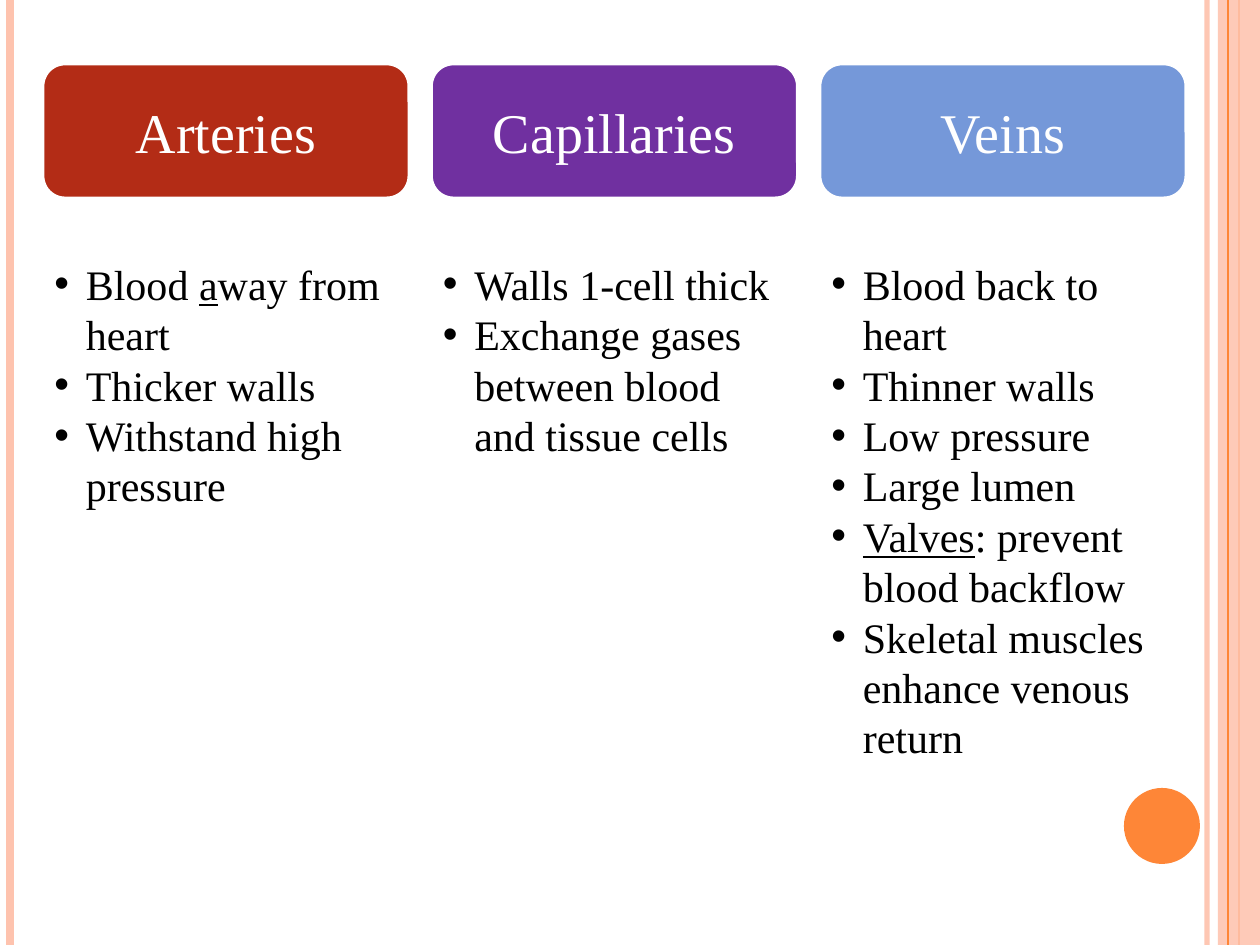
from lxml import etree
from pptx import Presentation
from pptx import util as u
from pptx.dml import color
from pptx.enum import shapes, text
from pptx.oxml import ns

FONT = "Times New Roman"
PEACH, ORANGE, WHITE, BLACK = "FEC3AE", "FE8637", "FFFFFF", "000000"
WIDTH, HEIGHT = 1260, 945

# Each bullet is a list of (words, underlined) runs
COLUMNS = [
    ("Arteries", "B32C16", [
        [("Blood ", False), ("a", True), ("way from heart", False)],
        [("Thicker walls", False)],
        [("Withstand high pressure", False)],
    ]),
    ("Capillaries", "7030A0", [
        [("Walls 1-cell thick", False)],
        [("Exchange gases between blood and tissue cells", False)],
    ]),
    ("Veins", "7598D9", [
        [("Blood back to heart", False)],
        [("Thinner walls", False)],
        [("Low pressure", False)],
        [("Large lumen", False)],
        [("Valves", True), (": prevent blood backflow", False)],
        [("Skeletal muscles enhance venous return", False)],
    ]),
]


def px(length):
    return u.Emu(round(length * 914400 / 126))


def paint(target, hex_color):
    """Set a solid colour on a fill."""
    target.solid()
    target.fore_color.rgb = color.RGBColor.from_string(hex_color)


def set_alpha(fill_parent, percent):
    rgb = next(fill_parent.iter(ns.qn("a:srgbClr")))
    etree.SubElement(rgb, ns.qn("a:alpha"), val=str(percent * 1000))


def add_box(slide, kind, left, top, width, height, fill):
    shape = slide.shapes.add_shape(kind, px(left), px(top), px(width), px(height))
    shape.shadow.inherit = False
    paint(shape.fill, fill)
    shape.line.fill.background()
    return shape


def add_stripe(slide, x, hex_color, points):
    stripe = slide.shapes.add_connector(
        shapes.MSO_CONNECTOR.STRAIGHT, px(x), px(0), px(x), px(HEIGHT))
    paint(stripe.line.fill, hex_color)
    stripe.line.width = u.Pt(points)
    etree.SubElement(stripe._element.spPr, ns.qn("a:effectLst"))
    return stripe


def add_run(paragraph, words, size, hex_color, underlined=False):
    run = paragraph.add_run()
    run.text = words
    run.font.name = FONT
    run.font.size = u.Pt(size)
    if underlined:
        run.font.underline = True
    paint(run.font.fill, hex_color)


def add_bullet(paragraph):
    properties = paragraph._p.get_or_add_pPr()
    properties.set("marL", str(u.Inches(0.25)))
    properties.set("indent", str(-u.Inches(0.25)))
    bullet_color = etree.SubElement(properties, ns.qn("a:buClr"))
    etree.SubElement(bullet_color, ns.qn("a:srgbClr"), val=BLACK)
    etree.SubElement(properties, ns.qn("a:buFont"), typeface="Arial")
    etree.SubElement(properties, ns.qn("a:buChar"), char="•")


def draw_frame(slide):
    """Side stripes, right band and corner disc."""
    set_alpha(add_stripe(slide, 1207, PEACH, 3).line._ln, 93)
    add_stripe(slide, 10, PEACH, 4.5)
    add_stripe(slide, 1239, ORANGE, 1.5)
    band = add_box(slide, shapes.MSO_SHAPE.RECTANGLE, 1218, 0, 42, HEIGHT, PEACH)
    set_alpha(band._element.spPr, 87)
    add_stripe(slide, 1228, ORANGE, 0.75)
    add_box(slide, shapes.MSO_SHAPE.OVAL, 1124, 788, 76, 76, ORANGE)


def draw_header(slide, left, top, width, height, title, fill):
    header = add_box(slide, shapes.MSO_SHAPE.ROUNDED_RECTANGLE,
                     left, top, width, height, fill)
    header.adjustments[0] = 0.17
    paint(header.line.fill, WHITE)
    header.line.width = u.Pt(2.75)
    frame = header.text_frame
    frame.word_wrap = True
    frame.vertical_anchor = text.MSO_ANCHOR.MIDDLE
    paragraph = frame.paragraphs[0]
    paragraph.alignment = text.PP_ALIGN.CENTER
    add_run(paragraph, title, 32, WHITE)


def draw_bullets(slide, left, top, width, height, bullets):
    box = slide.shapes.add_textbox(px(left), px(top), px(width), px(height))
    frame = box.text_frame
    frame.word_wrap = True
    for index, runs in enumerate(bullets):
        paragraph = frame.add_paragraph() if index else frame.paragraphs[0]
        paragraph.line_spacing = u.Pt(28.8)
        add_bullet(paragraph)
        for words, underlined in runs:
            add_run(paragraph, words, 24, BLACK, underlined)


def draw_columns(slide, left, top, width, height):
    """Equal columns, each a header above its bullets."""
    column_width, header_height, list_offset = 368, 136, 189
    step = (width - column_width) / (len(COLUMNS) - 1)
    for index, (title, fill, bullets) in enumerate(COLUMNS):
        x = left + index * step
        draw_header(slide, x, top, column_width, header_height, title, fill)
        draw_bullets(slide, x, top + list_offset, column_width,
                     height - list_offset, bullets)


def main():
    presentation = Presentation()
    presentation.slide_width, presentation.slide_height = px(WIDTH), px(HEIGHT)
    slide = presentation.slides.add_slide(presentation.slide_layouts[6])
    paint(slide.background.fill, WHITE)
    draw_frame(slide)
    draw_columns(slide, 42, 63, 1145, 813)
    presentation.save("out.pptx")


if __name__ == "__main__":
    main()
